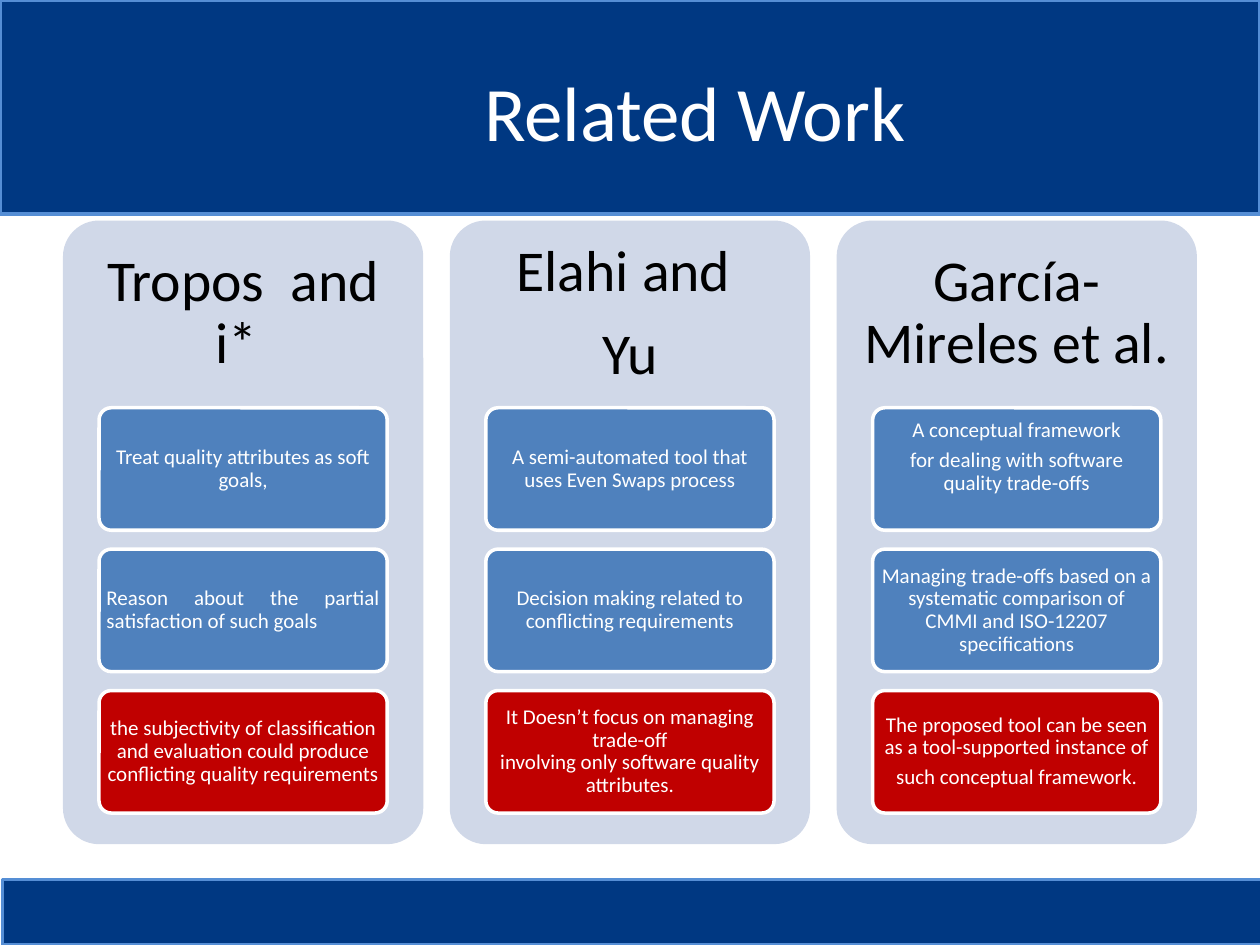
from pptx import Presentation
from pptx.dml.color import RGBColor
from pptx.enum.shapes import MSO_SHAPE as Kind
from pptx.enum.text import MSO_ANCHOR as Anchor, PP_ALIGN as Align
from pptx.util import Pt

NAVY, SKY, PALE = "003882", "558ED5", "D0D8E8"
BLUE, RED, WHITE, BLACK = "4F81BD", "C00000", "FFFFFF", "000000"


def block(kind, box, fill, line=None):
    shape = slide.shapes.add_shape(kind, *map(Pt, box))
    shape.shadow.inherit = False
    shape.fill.solid()
    shape.fill.fore_color.rgb = RGBColor.from_string(fill)
    if line:
        shape.line.color.rgb = RGBColor.from_string(line)
        shape.line.width = Pt(2)
    else:
        shape.line.fill.background()
    if kind == Kind.ROUNDED_RECTANGLE:
        shape.adjustments[0] = 0.1
    return shape


def write(shape, text, size, color, inset, para, align=Align.CENTER):
    """Fill a shape with text; inset is (side, top, bottom)."""
    side, top, bottom = inset
    frame = shape.text_frame
    form = {"word_wrap": True, "vertical_anchor": Anchor.MIDDLE,
            "margin_left": Pt(side), "margin_right": Pt(side),
            "margin_top": Pt(top), "margin_bottom": Pt(bottom)}
    for key, val in form.items():
        setattr(frame, key, val)
    frame.text = text
    for part in frame.paragraphs:
        for key, val in {"alignment": align, **para}.items():
            setattr(part, key, val)
        for key, val in {"name": "Calibri", "size": Pt(size)}.items():
            setattr(part.font, key, val)
        part.font.color.rgb = RGBColor.from_string(color)


deck = Presentation()
deck.slide_width, deck.slide_height = Pt(720), Pt(540)
slide = deck.slides.add_slide(deck.slide_layouts[6])

# Bands and title
block(Kind.RECTANGLE, (0, 0, 720, 122.4), NAVY, SKY)
block(Kind.RECTANGLE, (1.5, 502.6, 720, 37.4), NAVY, SKY)
title = slide.shapes.add_textbox(Pt(110.9), Pt(18), Pt(572.4), Pt(90))
write(title, "Related Work", 44, WHITE, (7.2, 3.6, 3.6), {})

# Three columns: heading, then two findings and one limit
columns = [
    ("Tropos  and i* ", [
        "Treat quality attributes as soft goals,",
        "Reason about the partial satisfaction of such goals",
        "the subjectivity of classification and evaluation could produce "
        "conﬂicting quality requirements"]),
    ("Elahi and \nYu", [
        "A semi-automated tool that uses Even Swaps process",
        "Decision making related to conflicting requirements",
        "It Doesn’t focus on managing trade-off\v"
        "involving only software quality attributes."]),
    ("García-Mireles et al.", [
        "A conceptual framework\nfor dealing with software quality trade-offs",
        "Managing trade-offs based on a systematic comparison of CMMI and "
        "ISO-12207 specifications",
        "The proposed tool can be seen as a tool-supported instance of\n"
        "such conceptual framework."]),
]
fills = [BLUE, BLUE, RED]
justified = (0, 1)
raised = (2, 0)

for col, (head, cards) in enumerate(columns):
    left = 36 + 221.04 * col
    block(Kind.ROUNDED_RECTANGLE, (left, 126, 205.9, 356.4), PALE)
    name = slide.shapes.add_textbox(Pt(left), Pt(126), Pt(205.9), Pt(106.9))
    write(name, head, 33, BLACK, (10, 10, 10),
          {"line_spacing": 0.9, "space_after": Pt(11.5)})
    for row, (text, fill) in enumerate(zip(cards, fills)):
        card = block(Kind.ROUNDED_RECTANGLE,
                     (left + 20.6, 233 + 80.8 * row, 164.7, 70), fill, WHITE)
        align = Align.JUSTIFY if (col, row) == justified else Align.CENTER
        low = 15.4 if (col, row) == raised else 2.2
        write(card, text, 12, WHITE, (2.2, 2.2, low),
              {"line_spacing": 0.9, "space_after": Pt(4.2)}, align)

deck.save("out.pptx")
